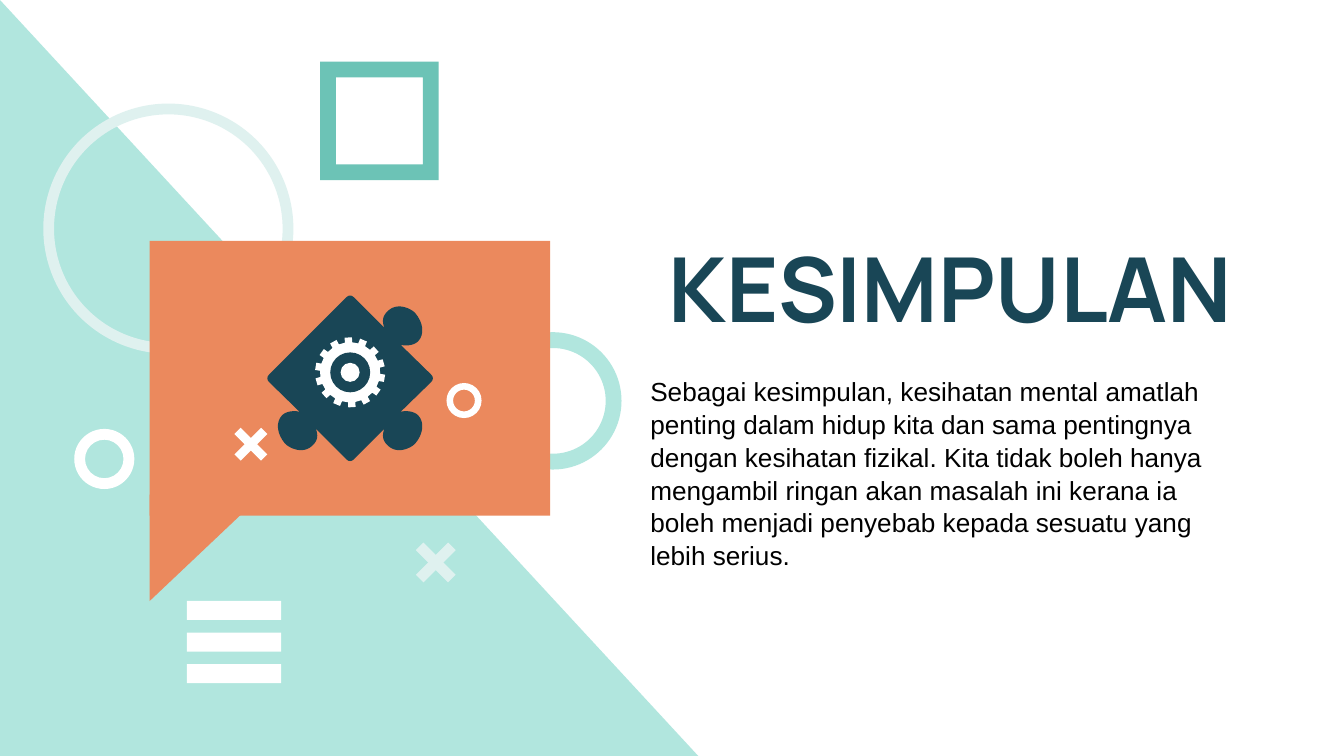
from math import cos, radians, sin

from pptx import Presentation
from pptx.dml.color import RGBColor
from pptx.enum.shapes import MSO_SHAPE as Shape
from pptx.enum.text import MSO_ANCHOR as Anchor, MSO_AUTO_SIZE as AutoSize, PP_ALIGN as Align
from pptx.util import Pt

TITLE = "KESIMPULAN"
BODY = (
    "Sebagai kesimpulan, kesihatan mental amatlah penting dalam hidup kita dan sama "
    "pentingnya dengan kesihatan fizikal. Kita tidak boleh hanya mengambil ringan akan "
    "masalah ini kerana ia boleh menjadi penyebab kepada sesuatu yang lebih serius."
)
COLORS = {
    "mint": "B1E6DE", "pale": "DFF1EF", "teal": "6CC3B6", "orange": "EB895D",
    "navy": "194656", "white": "FFFFFF", "black": "000000",
}

# kind, left, top, width, height, color, adjustment
BACKDROP = [
    (Shape.RIGHT_TRIANGLE, 0, 0, 375, 406, "mint", None),
    (Shape.DONUT, 23.2, 55.5, 134, 134, "pale", 0.043),
    (Shape.DONUT, 259.4, 178, 73.6, 73.6, "mint", 0.115),
    (Shape.RECTANGLE, 80.2, 129, 214.5, 147.2, "orange", None),
    (Shape.DONUT, 39.8, 229.8, 32.2, 32.2, "white", 0.18),
    (Shape.FRAME, 171.5, 33, 63.5, 63.5, "teal", 0.133),
]
TAIL = [(80.2, 265), (140.4, 265), (80.2, 322)]
BARS = {"left": 100.2, "top": 322, "width": 50.4, "height": 10.2, "step": 16.9, "count": 3}
# center x, center y, length, thickness, color
CROSSES = [(233.4, 301.3, 24.4, 5.8, "pale"), (134.4, 238, 20.2, 4.8, "white")]
SMALL_RING = (Shape.DONUT, 239.2, 205.2, 18.8, 18.8, "white", 0.19)

PUZZLE_CENTER = (187.6, 202.7)
PUZZLE_CORNER = [(-2.2, 43.2), (-1.5, 43.8), (-0.8, 44.2), (0, 44.3),
                 (0.8, 44.2), (1.5, 43.8), (2.2, 43.2)]
KNOB_START = (18.4, 27)
KNOB_CURVES = [
    [(16.9, 30.6), (17.6, 33.5), (19.8, 35.6)],
    [(21.6, 37.6), (24, 38.5), (26.3, 38.5)],
    [(29.2, 38.5), (32.8, 37.1), (34.9, 34.9)],
    [(39.2, 29.9), (40, 23.4), (36.4, 19.8)],
    [(34.9, 18.4), (32.8, 17.6), (29.9, 17.6)],
    [(29.2, 17.6), (28.4, 17.6), (27, 18)],
]
GEAR_CENTER = (187.6, 199.5)
GEAR = {"teeth": 14, "root": 16.1, "tip": 18.8, "turn": -3, "hole": 10.7, "hub": 5.1}

presentation = Presentation()
presentation.slide_width, presentation.slide_height = Pt(720), Pt(405)
slide = presentation.slides.add_slide(presentation.slide_layouts[5])


def color(name):
    return RGBColor.from_string(COLORS[name])


def paint(shape, name):
    shape.shadow.inherit = False
    shape.fill.solid()
    shape.fill.fore_color.rgb = color(name)
    shape.line.fill.background()
    return shape


def add_preset(kind, left, top, width, height, name, adjustment=None):
    shape = slide.shapes.add_shape(kind, Pt(left), Pt(top), Pt(width), Pt(height))
    if adjustment is not None:
        shape.adjustments[0] = adjustment
    return paint(shape, name)


def add_outline(points, name):
    scaled = [(x * 100, y * 100) for x, y in points]
    builder = slide.shapes.build_freeform(*scaled[0], scale=Pt(1) / 100)
    builder.add_line_segments(scaled[1:], close=True)
    return paint(builder.convert_to_shape(), name)


def add_disc(center, radius, name):
    x, y = center
    add_preset(Shape.OVAL, x - radius, y - radius, 2 * radius, 2 * radius, name)


def sample_curves(start, curves, steps=8):
    points = [start]
    for first, second, end in curves:
        begin = points[-1]
        for step in range(1, steps + 1):
            t = step / steps
            weights = ((1 - t) ** 3, 3 * t * (1 - t) ** 2, 3 * t * t * (1 - t), t ** 3)
            controls = (begin, first, second, end)
            points.append(tuple(sum(w * p[axis] for w, p in zip(weights, controls))
                                for axis in (0, 1)))
    return points


def puzzle_outline():
    knob = sample_curves(KNOB_START, KNOB_CURVES)
    outline = [(x, -y) for x, y in PUZZLE_CORNER]
    outline += [(x, -y) for x, y in knob]
    outline += [(y, x) for x, y in PUZZLE_CORNER]
    outline += knob[::-1]
    outline += [(-x, y) for x, y in PUZZLE_CORNER]
    outline += [(-x, y) for x, y in knob]
    outline += [(-y, -x) for x, y in PUZZLE_CORNER]
    return [(PUZZLE_CENTER[0] + x, PUZZLE_CENTER[1] + y) for x, y in outline]


def gear_outline():
    points = []
    for tooth in range(GEAR["teeth"]):
        middle = GEAR["turn"] + tooth * 360 / GEAR["teeth"]
        for offset, part in ((-7, "root"), (-6, "tip"), (6, "tip"), (7, "root")):
            angle = radians(middle + offset)
            points.append((GEAR_CENTER[0] + GEAR[part] * sin(angle),
                           GEAR_CENTER[1] - GEAR[part] * cos(angle)))
    return points


def write_text(shape, box, text, font_name, size, name, anchor, alignment):
    shape.left, shape.top, shape.width, shape.height = map(Pt, box)
    frame = shape.text_frame
    frame.word_wrap = True
    frame.auto_size = AutoSize.NONE
    frame.vertical_anchor = anchor
    frame.margin_left = frame.margin_right = frame.margin_top = frame.margin_bottom = Pt(7.2)
    frame.text = text
    paragraph = frame.paragraphs[0]
    paragraph.alignment = alignment
    paragraph.font.name = font_name
    paragraph.font.size = Pt(size)
    paragraph.font.color.rgb = color(name)
    return paragraph


for item in BACKDROP:
    add_preset(*item)
add_outline(TAIL, "orange")
for index in range(BARS["count"]):
    add_preset(Shape.RECTANGLE, BARS["left"], BARS["top"] + index * BARS["step"],
               BARS["width"], BARS["height"], "white")
add_outline(puzzle_outline(), "navy")
add_outline(gear_outline(), "white")
add_disc(GEAR_CENTER, GEAR["hole"], "navy")
add_disc(GEAR_CENTER, GEAR["hub"], "white")
add_preset(*SMALL_RING)
for x, y, length, thickness, name in CROSSES:
    for rotation in (45, 135):
        arm = add_preset(Shape.RECTANGLE, x - length / 2, y - thickness / 2,
                         length, thickness, name)
        arm.rotation = rotation

heading = write_text(slide.shapes.title, (337.7, 118.1, 329.8, 71.3), TITLE,
                     "Manrope", 48, "navy", Anchor.MIDDLE, Align.RIGHT)
heading.font.bold = True
body_box = slide.shapes.add_textbox(0, 0, 0, 0)
body = write_text(body_box, (341.3, 193, 323.3, 133.9), BODY,
                  "Arial", 14, "black", Anchor.TOP, Align.LEFT)
body.line_spacing = 1.05

presentation.save("out.pptx")
